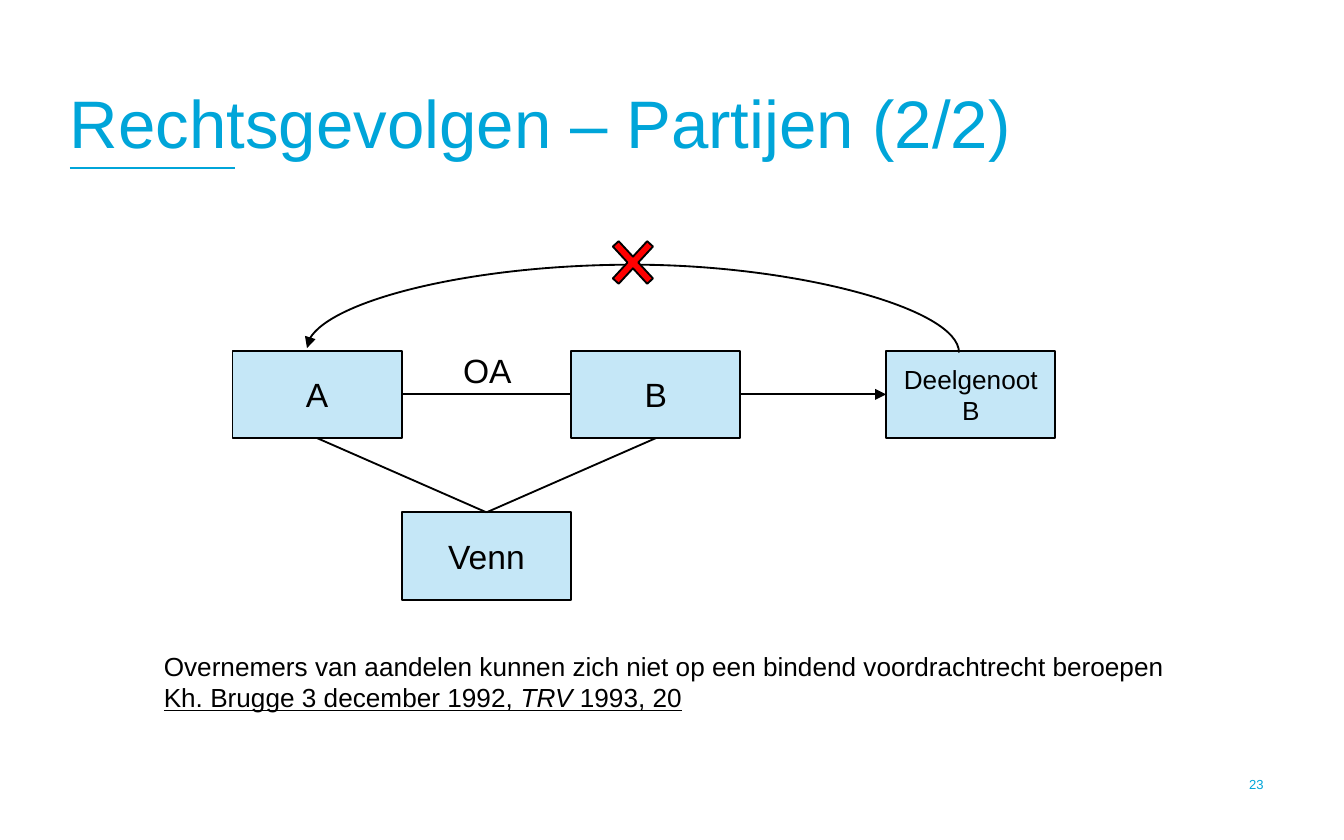
from dataclasses import dataclass
from typing import NamedTuple

from lxml.etree import SubElement
from pptx import Presentation
from pptx.dml.color import RGBColor
from pptx.enum.shapes import MSO_CONNECTOR as Cxn, MSO_SHAPE as Shape
from pptx.enum.text import MSO_ANCHOR as Anchor, PP_ALIGN as Align
from pptx.oxml.ns import qn
from pptx.util import Inches, Pt


@dataclass(frozen=True)
class Theme:
    font: str = "Arial"
    accent: RGBColor = RGBColor(0x00, 0xA5, 0xD9)
    ink: RGBColor = RGBColor(0, 0, 0)
    box: RGBColor = RGBColor(0xC5, 0xE7, 0xF7)
    cross: RGBColor = RGBColor(0xFF, 0, 0)
    title: int = 36
    label: int = 18
    body: int = 14
    number: int = 7
    line: float = 1
    rule: float = 1.5


class Point(NamedTuple):
    x: int
    y: int


class Rect(NamedTuple):
    x: int
    y: int
    w: int
    h: int


class Run(NamedTuple):
    text: str
    italic: bool = False
    underline: bool = False


class Party(NamedTuple):
    name: str
    col: float
    row: float
    size: int


T = Theme()
WIDTH, HEIGHT = Inches(10), Inches(6.25)
LEFT, TOP = Inches(1.73), Inches(2.61)
COL, ROW = Inches(1.26), Inches(0.65)
VENN_ROW, SUB_COL = 1.85, 3.86

PARTIES = [
    Party("A", 0, 0, T.label),
    Party("B", 2, 0, T.label),
    Party("Venn", 1, VENN_ROW, T.label),
    Party("Deelgenoot B", SUB_COL, 0, T.body),
]
NOTE = [
    [Run("Overnemers van aandelen kunnen zich niet op een bindend voordrachtrecht beroepen")],
    [Run("Kh. Brugge 3 december 1992, ", underline=True),
     Run("TRV ", italic=True, underline=True),
     Run("1993, 20", underline=True)],
]


def share(x: float, y: float) -> Point:
    """Point given as shares of the slide's size."""
    return Point(round(WIDTH * x), round(HEIGHT * y))


def cell(col: float, row: float) -> Point:
    """Point given in columns and rows of the diagram grid."""
    return Point(round(LEFT + col * COL), round(TOP + row * ROW))


def area(x: float, y: float, w: float, h: float) -> Rect:
    return Rect(*share(x, y), *share(w, h))


def block(col: float, row: float, cols: float = 1, rows: float = 1) -> Rect:
    return Rect(*cell(col, row), round(cols * COL), round(rows * ROW))


def write(tf, lines: list[list[Run]], size: int, color: RGBColor = T.ink,
          align: Align = Align.LEFT, anchor: Anchor = Anchor.TOP) -> None:
    tf.word_wrap = True
    tf.vertical_anchor = anchor
    for i, runs in enumerate(lines):
        p = tf.add_paragraph() if i else tf.paragraphs[0]
        p.alignment = align
        for run in runs:
            r = p.add_run()
            r.text = run.text
            f = r.font
            f.name, f.size, f.color.rgb = T.font, Pt(size), color
            f.italic, f.underline = run.italic, run.underline


def add_text(s, rect: Rect, lines: list[list[Run]], size: int, **style):
    tf = s.shapes.add_textbox(*rect).text_frame
    write(tf, lines, size, **style)
    return tf


def add_shape(s, kind: Shape, rect: Rect, fill: RGBColor):
    sp = s.shapes.add_shape(kind, *rect)
    sp.shadow.inherit = False
    sp.fill.solid()
    sp.fill.fore_color.rgb = fill
    sp.line.color.rgb, sp.line.width = T.ink, Pt(T.line)
    return sp


def add_party(s, party: Party) -> None:
    sp = add_shape(s, Shape.RECTANGLE, block(party.col, party.row), T.box)
    write(sp.text_frame, [[Run(party.name)]], party.size,
          align=Align.CENTER, anchor=Anchor.MIDDLE)


def add_line(s, start: Point, end: Point, color: RGBColor = T.ink,
             width: float = T.line, arrow: bool = False, kind: Cxn = Cxn.STRAIGHT):
    c = s.shapes.add_connector(kind, *start, *end)
    c.line.color.rgb, c.line.width = color, Pt(width)
    if arrow:
        SubElement(c.line._get_or_add_ln(), qn("a:tailEnd"), type="triangle")
    SubElement(c._element.spPr, qn("a:effectLst"))
    return c


def add_arc(s, start: Point, end: Point, rise: int) -> None:
    """Arrow that bows upward by rise, as a curve turned a quarter to the left."""
    span, drop = start.x - end.x, start.y - end.y
    mid = Point((start.x + end.x) // 2, (start.y + end.y) // 2)
    c = add_line(s, Point(mid.x - drop // 2, mid.y + span // 2),
                 Point(mid.x + drop // 2, mid.y - span // 2),
                 arrow=True, kind=Cxn.CURVE)
    spPr = c._element.spPr
    spPr.find(qn("a:xfrm")).set("rot", str(270 * 60000))
    geom = spPr.find(qn("a:prstGeom"))
    guides = geom.find(qn("a:avLst"))
    if guides is None:
        guides = SubElement(geom, qn("a:avLst"))
    SubElement(guides, qn("a:gd"), name="adj1", fmla=f"val {round(rise / drop * 100000)}")


def main() -> None:
    prs = Presentation()
    prs.slide_width, prs.slide_height = WIDTH, HEIGHT
    s = prs.slides.add_slide(prs.slide_layouts[6])

    add_line(s, share(0.052, 0.2), share(0.175, 0.2), T.accent, T.rule)
    title = add_text(s, area(0.052, 0.08, 0.881, 0.12),
                     [[Run("Rechtsgevolgen – Partijen (2/2)")]], T.title,
                     color=T.accent, anchor=Anchor.BOTTOM)
    title.margin_left = title.margin_right = 0
    title.paragraphs[0].line_spacing = 0.8
    add_text(s, area(0.902, 0.907, 0.048, 0.053), [[Run("23")]], T.number,
             color=T.accent, align=Align.RIGHT, anchor=Anchor.MIDDLE)

    for party in PARTIES:
        add_party(s, party)
    for col in (0.5, 2.5):
        add_line(s, cell(col, 1), cell(1.5, VENN_ROW))
    add_line(s, cell(1, 0.5), cell(2, 0.5))
    add_line(s, cell(3, 0.5), cell(SUB_COL, 0.5), arrow=True)
    add_arc(s, cell(4.29, 0.02), cell(0.44, -0.03), rise=ROW)
    add_text(s, block(1.2, -0.09, 0.61, 0.62), [[Run("OA")]], T.label, align=Align.CENTER)
    cross = add_shape(s, Shape.MATH_MULTIPLY, block(2.17, -1.42, 0.39, 0.82), T.cross)
    cross.adjustments[0] = 0.12

    note = add_text(s, area(0.092, 0.766, 0.841, 0.091), NOTE, T.body)
    for p in note.paragraphs:
        pPr = p._p.get_or_add_pPr()
        pPr.set("marL", str(Inches(0.2)))
        pPr.set("indent", "0")

    prs.save("out.pptx")


if __name__ == "__main__":
    main()
